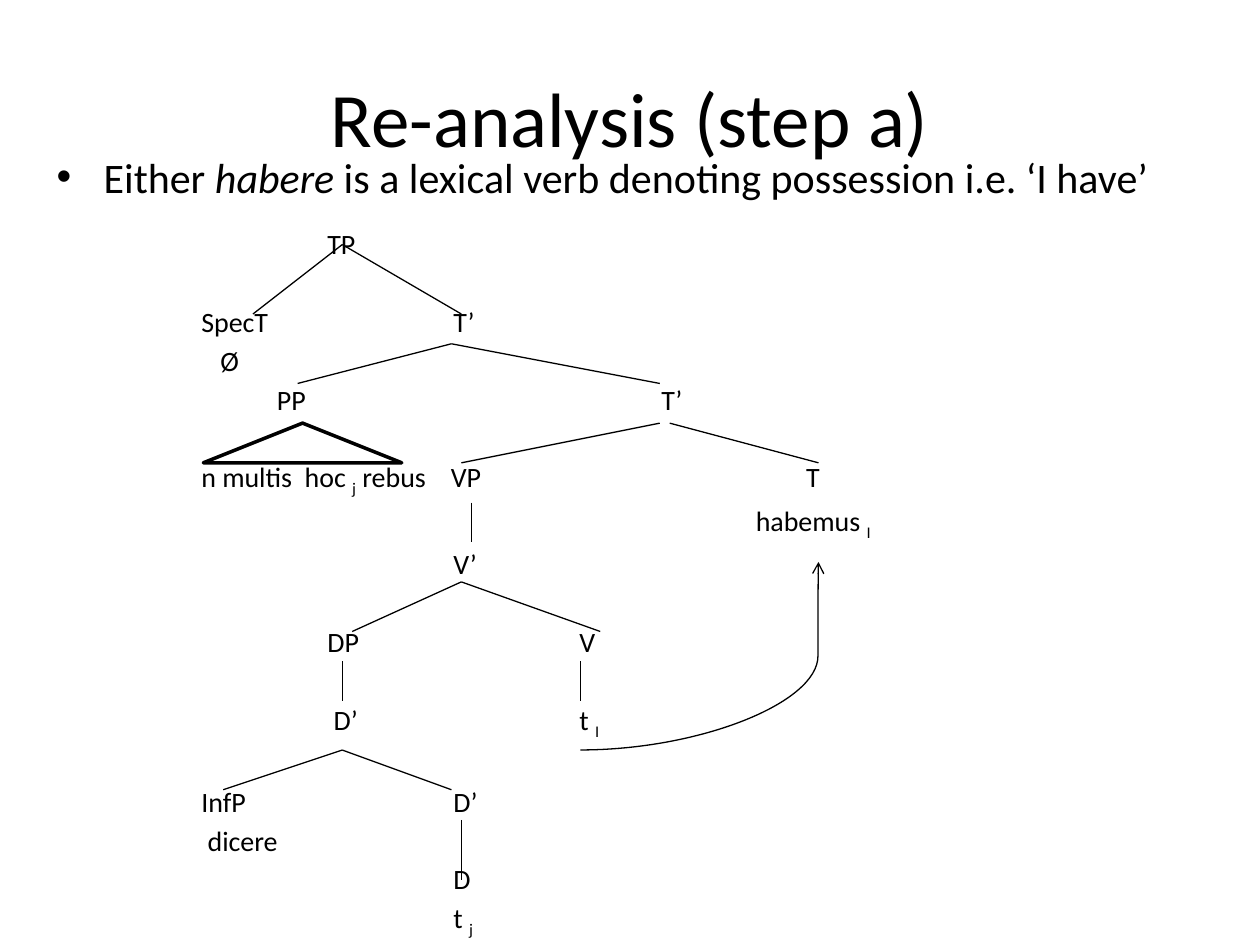
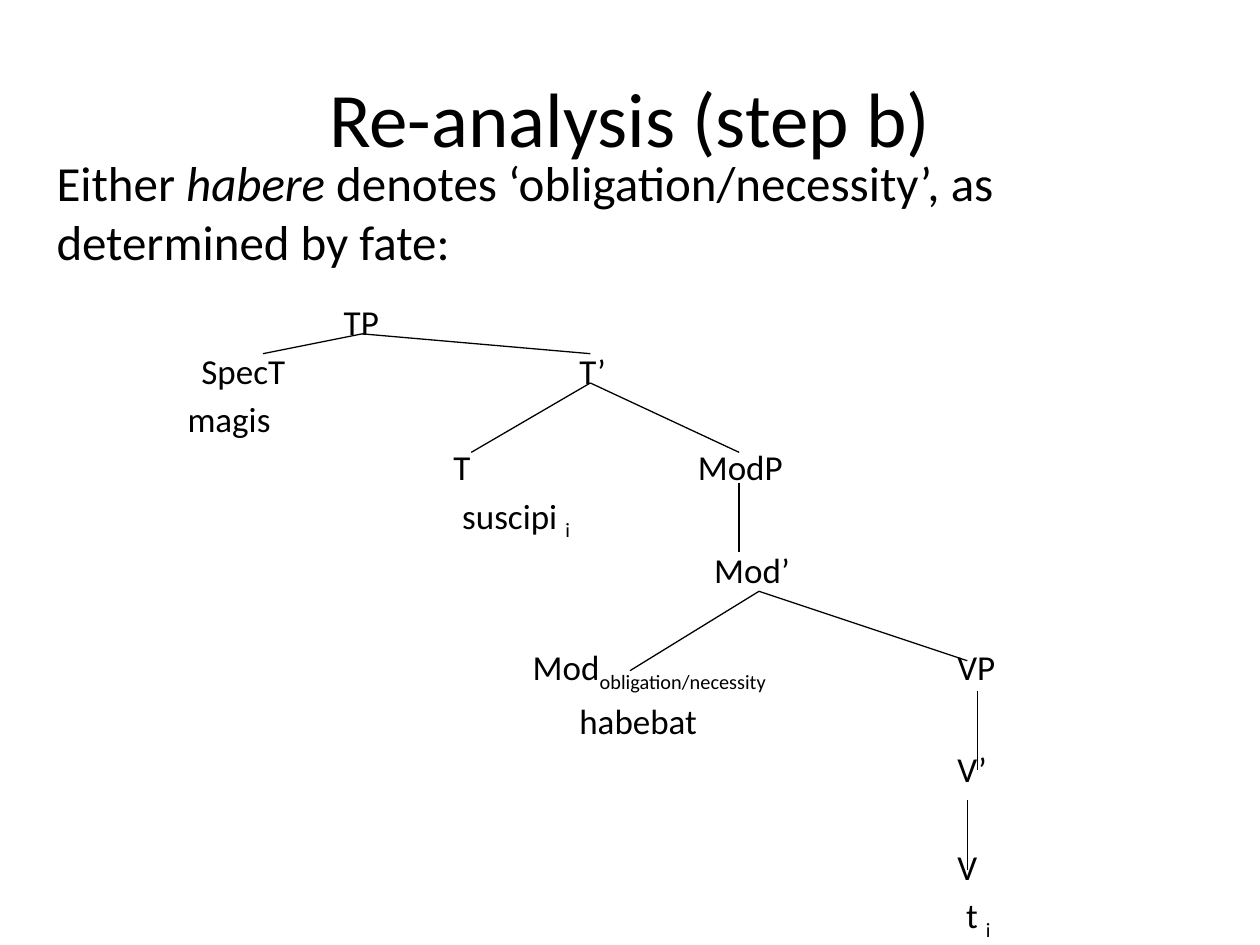
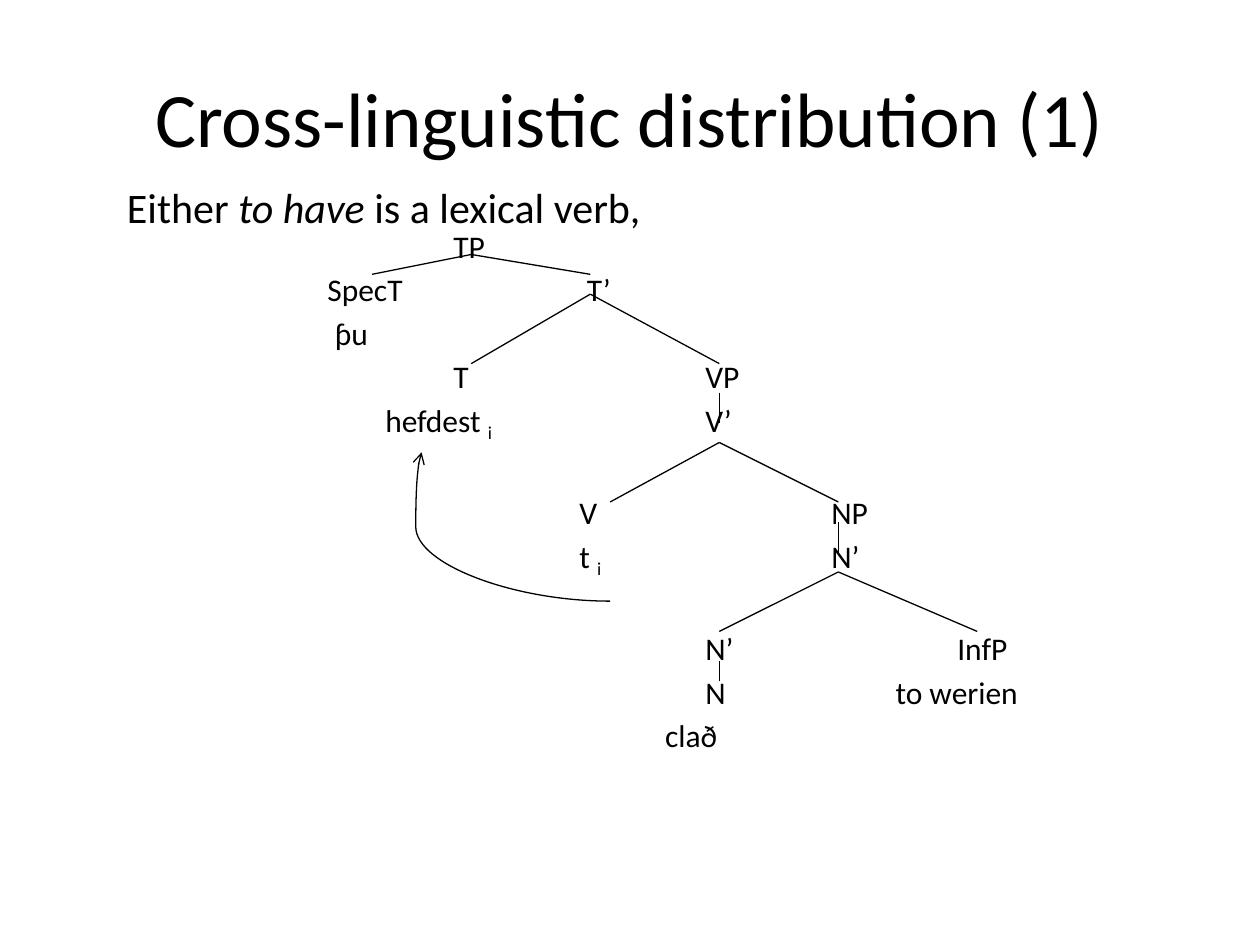
"""Three slides of syntax trees for 'have' in Latin and Middle English."""
from lxml import etree
from pptx import Presentation
from pptx.dml.color import RGBColor
from pptx.enum.shapes import MSO_CONNECTOR, MSO_SHAPE
from pptx.enum.text import MSO_ANCHOR, PP_ALIGN
from pptx.oxml.ns import qn
from pptx.util import Cm, Pt

STRAIGHT, CURVE = MSO_CONNECTOR.STRAIGHT, MSO_CONNECTOR.CURVE
TRIANGLE = MSO_SHAPE.ISOSCELES_TRIANGLE
TOP, MIDDLE = MSO_ANCHOR.TOP, MSO_ANCHOR.MIDDLE
LEFT, CENTER = PP_ALIGN.LEFT, PP_ALIGN.CENTER
FONT, BLACK, WHITE = "Calibri", "000000", "FFFFFF"
COLUMN, WIDTH = 2.54, 22.86


def rgb(value):
    return RGBColor.from_string(value)


def add_text(s, box, rows, size, align=LEFT, anchor=TOP, accent="italic", bullet=False):
    """Write rows of {column: text}; an empty row leaves a gap, _marked_ parts get the accent."""
    tf = s.shapes.add_textbox(*map(Cm, box)).text_frame
    tf.word_wrap = True
    tf.vertical_anchor = anchor
    p, gap = tf.paragraphs[0], 0
    for cells in rows:
        if not cells:
            gap += 1.4 * size
            continue
        if p.runs:
            p = tf.add_paragraph()
            p.space_before = Pt(round(gap + 0.18 * size, 1))
        gap = 0
        p.alignment = align
        pPr = p._p.get_or_add_pPr()
        if bullet:
            pPr.set("marL", str(Cm(0.95)))
            pPr.set("indent", str(-Cm(0.95)))
            etree.SubElement(pPr, qn("a:buFont"), typeface="Arial")
            etree.SubElement(pPr, qn("a:buChar"), char="•")
        stops = [x for x in cells if x]
        if stops:
            tabs = etree.SubElement(pPr, qn("a:tabLst"))
            for x in stops:
                etree.SubElement(tabs, qn("a:tab"), pos=str(Cm(x * COLUMN)), algn="l")
        line = "".join("\t" * bool(x) + text for x, text in cells.items())
        for j, part in enumerate(line.split("_")):
            if not part:
                continue
            r = p.add_run()
            r.text = part
            r.font.name, r.font.size = FONT, Pt(size)
            r.font.color.rgb = rgb(BLACK)
            if j % 2 and accent == "italic":
                r.font.italic = True
            elif j % 2:
                r._r.get_or_add_rPr().set("baseline", "-25000")


slides = [
    dict(
        title="Re-analysis (step a)",
        intro="Either _habere _is a lexical verb denoting possession i.e. ‘I have’",
        intro_at=(0.89, 2.92), intro_size=24, bullet=True,
        tree_top=4.45, tree_size=16,
        rows=[
            {2: "TP"},
            {},
            {1: "SpecT", 3: "T’"},
            {1.15: "Ø"},
            {1.6: "PP", 4.65: "T’"},
            {},
            {1: "n multis", 1.82: "hoc _j_ rebus", 2.98: "VP", 5.8: "T"},
            {5.4: "habemus _I_"},
            {3: "V’"},
            {},
            {2: "DP", 4: "V"},
            {},
            {2.05: "D’", 4: "t _I_"},
            {},
            {1: "InfP", 3: "D’"},
            {1.05: "dicere"},
            {3: "D"},
            {3: "t _j_"},
        ],
        branches={
            1.4: [(6.9, 4.93, 5.1, 9.3)],
            0.8: [(9.1, 6.93, 6, 13.3), (13.3, 8.53, 9.3), (13.5, 8.53, 16.5),
                  (9.5, 10.13), (6.9, 13.33), (11.7, 13.33), (6.9, 15.12, 4.5, 9.1)],
            1: [(9.3, 11.73, 7.1, 12.1)],
            1.2: [(9.3, 16.53)],
        },
        movement=(11.7, 15.12, 16.5, 11.33), bend=99800,
        triangle=(4.1, 8.53, 4, 0.8),
    ),
    dict(
        title="Re-analysis (step b)",
        intro="Either _habere _denotes ‘obligation/necessity’, as determined by fate:",
        intro_at=(0.89, 2.95), intro_size=28,
        tree_top=5.94, tree_size=20,
        rows=[
            {2.13: "TP"},
            {1: "SpecT", 4: "T’"},
            {0.89: "magis"},
            {3: "T", 4.94: "ModP"},
            {3.07: "suscipi _i_"},
            {5.07: "Mod’"},
            {},
            {3.63: "Mod_obligation/necessity_", 7: "VP"},
            {4: "habebat"},
            {7: "V’"},
            {},
            {7: "V"},
            {7.07: "t _i_"},
        ],
        branches={
            0.4: [(7.3, 6.73, 5.3, 11.9)],
            1.4: [(11.9, 7.72, 9.5, 14.9), (14.9, 9.73), (15.3, 11.92, 19.5), (19.5, 16.13)],
            1.6: [(15.3, 11.92, 12.7), (19.7, 13.92)],
        },
    ),
    dict(
        title="Cross-linguistic distribution (1)",
        intro="Either _to have _is a lexical verb,",
        intro_at=(2.31, 3.53), intro_size=24,
        tree_top=4.45, tree_size=18,
        rows=[
            {3: "TP"},
            {2: "SpecT", 4.06: "T’"},
            {2.06: "ƥu"},
            {3: "T", 5: "VP"},
            {2.46: "hefdest _i_", 5: "V’"},
            {},
            {4: "V", 6: "NP"},
            {4: "t _i_", 6: "N’"},
            {},
            {5: "N’", 7: "InfP"},
            {5: "N", 6.51: "to werien"},
            {4.68: "clað"},
        ],
        branches={
            0.4: [(9.5, 5.13, 7.5, 11.9), (14.5, 13.33)],
            1.4: [(11.9, 5.93, 9.5, 14.5)],
            0.6: [(14.5, 7.92), (16.9, 10.52)],
            1.2: [(14.5, 8.92, 12.3, 16.9), (16.9, 11.53, 14.5, 19.7)],
        },
        movement=(12.3, 12.12, 8.5, 9.12), bend=103100,
    ),
]

prs = Presentation()
prs.slide_width, prs.slide_height = Cm(25.4), Cm(19.05)

for d in slides:
    s = prs.slides.add_slide(prs.slide_layouts[6])
    add_text(s, (1.27, 0.76, WIDTH, 3.18), [{0: d["title"]}], 44, align=CENTER, anchor=MIDDLE)
    add_text(s, (1.27, d["tree_top"], WIDTH, 12.57), d["rows"], d["tree_size"],
             accent="subscript")

    links = [(STRAIGHT, (x, y, child, y + drop))
             for drop, nodes in d["branches"].items()
             for x, y, *children in nodes
             for child in children or [x]]
    if "movement" in d:
        links.append((CURVE, d["movement"]))
    for kind, ends in links:
        sp = s.shapes.add_connector(kind, *map(Cm, ends))
        sp.line.color.rgb = rgb(BLACK)
        sp.line.width = Pt(0.75)
        spPr = sp._element.spPr
        etree.SubElement(spPr, qn("a:effectLst"))
        if kind == CURVE:
            etree.SubElement(sp.line._get_or_add_ln(), qn("a:tailEnd"), type="arrow")
            guides = spPr.find(qn("a:prstGeom")).find(qn("a:avLst"))
            etree.SubElement(guides, qn("a:gd"), name="adj1", fmla=f"val {d['bend']}")

    if "triangle" in d:
        sp = s.shapes.add_shape(TRIANGLE, *map(Cm, d["triangle"]))
        sp.shadow.inherit = False
        sp.fill.solid()
        sp.fill.fore_color.rgb = rgb(WHITE)
        sp.line.color.rgb = rgb(BLACK)
        sp.line.width = Pt(2)

    add_text(s, (*d["intro_at"], WIDTH, 2), [{0: d["intro"]}], d["intro_size"],
             bullet=d.get("bullet", False))

prs.save("out.pptx")
